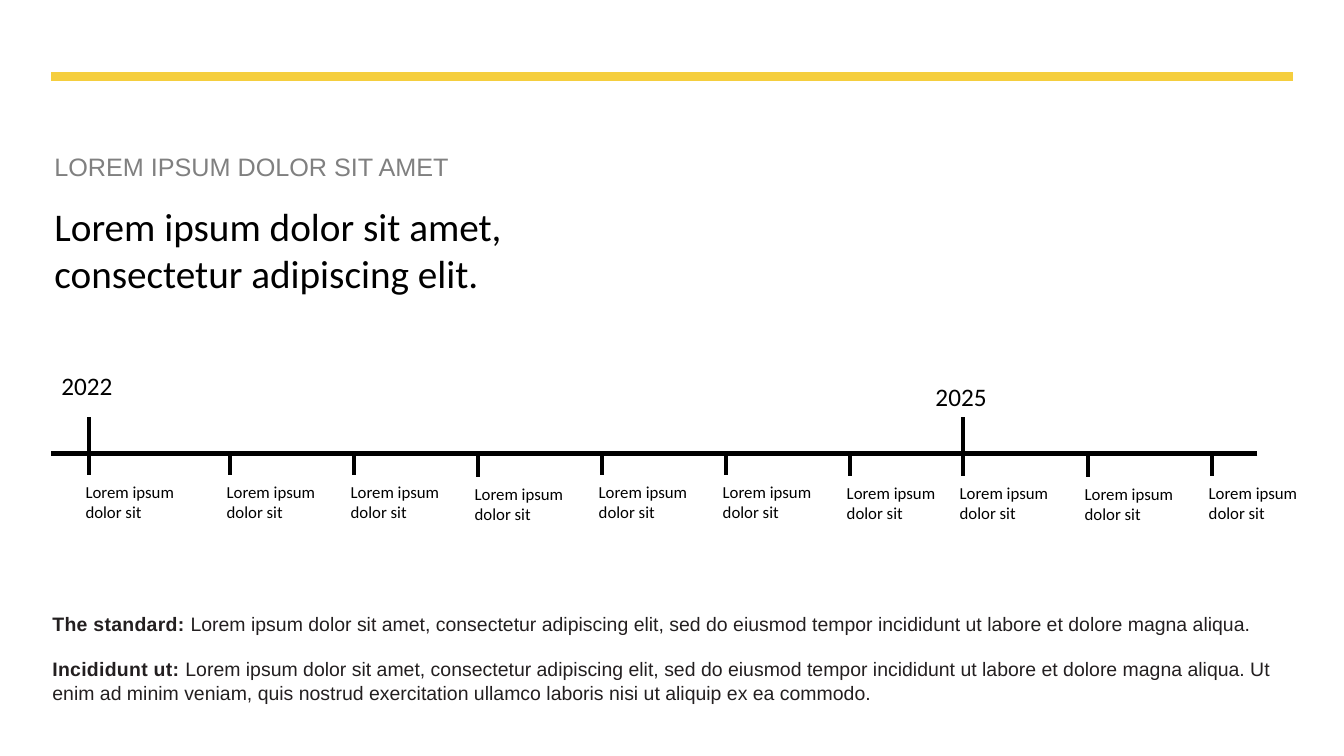
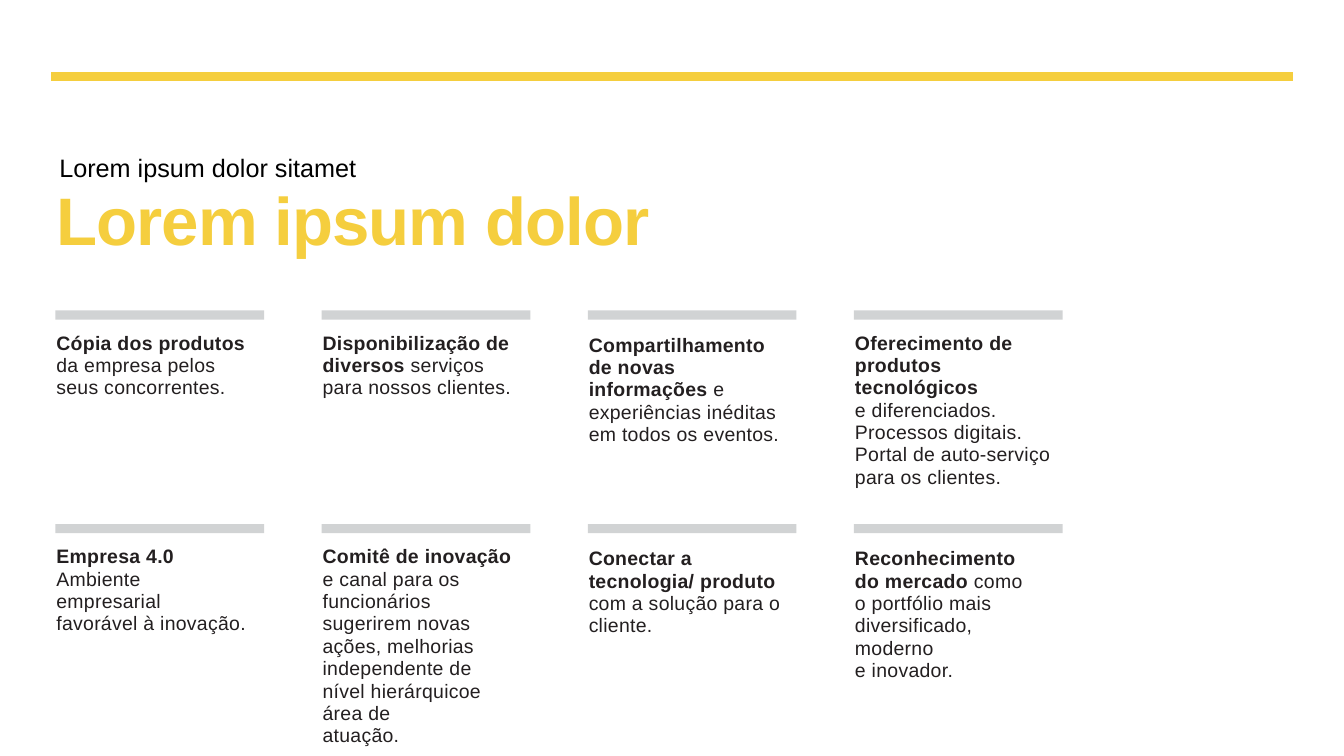
from dataclasses import dataclass, field

from lxml import etree
from pptx import Presentation
from pptx.dml.color import RGBColor
from pptx.enum.shapes import MSO_CONNECTOR, MSO_SHAPE
from pptx.enum.text import MSO_ANCHOR, MSO_AUTO_SIZE, PP_ALIGN
from pptx.oxml.ns import qn
from pptx.util import Inches, Pt

STRAIGHT = MSO_CONNECTOR.STRAIGHT
RECTANGLE = MSO_SHAPE.RECTANGLE
TOP, MIDDLE = MSO_ANCHOR.TOP, MSO_ANCHOR.MIDDLE
NO_FIT, GROW = MSO_AUTO_SIZE.NONE, MSO_AUTO_SIZE.SHAPE_TO_FIT_TEXT
LEFT = PP_ALIGN.LEFT

YELLOW, BLACK, INK = "F5CE3E", "000000", "231F20"
GREY, SILVER = "808080", "D1D3D4"
PADDED = (0.1, 0.05, 0.1, 0.05)


def font(name, size, color, bold=False, spacing=0):
    return {"font": {"name": name, "size": Pt(size), "bold": bold},
            "color": color, "spacing": spacing}


@dataclass(frozen=True)
class Theme:
    accent: str = YELLOW
    axis: str = BLACK
    bar: str = SILVER
    text: dict = field(default_factory=lambda: {
        "headline": font("Calibri", 28, BLACK),
        "big_title": font("Arial", 48, YELLOW, bold=True, spacing=-0.7),
        "grey_kicker": font("Arial", 18, GREY),
        "kicker": font("Arial", 18, BLACK),
        "year": font("Calibri", 18, BLACK),
        "label": font("Calibri", 12, BLACK),
        "note": font("Arial", 13.9, INK, spacing=0.2),
        "tight_note": font("Arial", 13.9, INK),
        "lead": font("Arial", 13.9, INK, bold=True, spacing=0.2),
    })


class Deck:
    """Holds the theme, the presentation and the slide being built."""

    def __init__(self, theme):
        self.theme = theme
        self.prs = Presentation()
        self.prs.slide_width, self.prs.slide_height = Inches(13.33), Inches(7.5)
        self.layout = self.prs.slide_layouts[5]
        self.slide = None

    def new_slide(self):
        self.slide = self.prs.slides.add_slide(self.layout)

    def add_band(self):
        """Place the yellow rule on the layout, so that every slide shows it."""
        band = self.line(12.82, 0.76, 0.51, 0.76, self.theme.accent, 6)
        self.layout.shapes.element.append(band.element)

    def line(self, x1, y1, x2, y2, color, width):
        sp = self.slide.shapes.add_connector(
            STRAIGHT, Inches(x1), Inches(y1), Inches(x2), Inches(y2))
        sp.line.color.rgb = RGBColor.from_string(color)
        sp.line.width = Pt(width)
        etree.SubElement(sp.element.spPr, qn("a:effectLst"))
        return sp

    def bar(self, x, y, w, h):
        sp = self.slide.shapes.add_shape(
            RECTANGLE, Inches(x), Inches(y), Inches(w), Inches(h))
        sp.shadow.inherit = False
        sp.fill.solid()
        sp.fill.fore_color.rgb = RGBColor.from_string(self.theme.bar)
        sp.line.fill.background()

    def run(self, p, text, style):
        look = self.theme.text[style]
        r = p.add_run()
        r.text = text
        for name, value in look["font"].items():
            setattr(r.font, name, value)
        r.font.color.rgb = RGBColor.from_string(look["color"])
        if look["spacing"]:
            r._r.get_or_add_rPr().set("spc", str(round(look["spacing"] * 100)))

    def frame(self, tf, insets, anchor, fit):
        sides = ("margin_left", "margin_top", "margin_right", "margin_bottom")
        values = dict(zip(sides, map(Inches, insets)),
                      word_wrap=True, vertical_anchor=anchor, auto_size=fit)
        for name, value in values.items():
            setattr(tf, name, value)

    def title(self, text, style, box, insets=PADDED, anchor=TOP):
        sp = self.slide.shapes.title
        sp.left, sp.top, sp.width, sp.height = map(Inches, box)
        self.frame(sp.text_frame, insets, anchor, NO_FIT)
        p = sp.text_frame.paragraphs[0]
        p.alignment = LEFT
        self.run(p, text, style)

    def text(self, paragraphs, box, style, insets=PADDED, **spacing):
        """Each paragraph is a pair: a bold lead and the text after it."""
        sp = self.slide.shapes.add_textbox(*map(Inches, box))
        tf = sp.text_frame
        self.frame(tf, insets, TOP, GROW)
        for i, parts in enumerate(paragraphs):
            p = tf.add_paragraph() if i else tf.paragraphs[0]
            for name, value in spacing.items():
                if i or name != "space_before":
                    setattr(p, name, value)
            for part, part_style in zip(parts, ("lead", style)):
                if part:
                    self.run(p, part, part_style)

    def label(self, text, box, style):
        self.text([("", text)], box, style)


# Tick positions, and how far each tick and its label sit below the first
TICKS = [0.88] + [2.28 + 1.23 * i for i in range(6)] + [9.55, 10.79, 12.02]
DROPS = [0, 0, 0, 0.02, 0, 0, 0.01, 0.01, 0.02, 0.01]
YEARS = {0: ("2022", 0.51, 3.62), 7: ("2025", 9.18, 3.73)}

NOTES = [
    ("The standard: ",
     "Lorem ipsum dolor sit amet, consectetur adipiscing elit, sed do eiusmod "
     "tempor incididunt ut labore et dolore magna aliqua."),
    ("Incididunt ut: ",
     "Lorem ipsum dolor sit amet, consectetur adipiscing elit, sed do eiusmod "
     "tempor incididunt ut labore et dolore magna aliqua. Ut enim ad minim "
     "veniam, quis nostrud exercitation ullamco laboris nisi ut aliquip ex ea "
     "commodo."),
]

# Each card: width, height, top inset, right inset, paragraphs
CARDS = [
    [
        (1.94, 0.7, 0.03, 0, [
            ("Cópia dos produtos", ""),
            ("", "da empresa pelos seus concorrentes.")]),
        (1.97, 0.7, 0.03, 0, [
            ("Disponibilização de", ""),
            ("diversos ", "serviços para nossos clientes.")]),
        (1.99, 0.92, 0.05, 0, [
            ("Compartilhamento de novas informações ",
             "e experiências inéditas em todos os eventos.")]),
        (2.03, 1.37, 0.03, 0, [
            ("Oferecimento de", ""),
            ("produtos tecnológicos", ""),
            ("", "e diferenciados."),
            ("", "Processos digitais."),
            ("", "Portal de auto-serviço para os clientes.")]),
    ],
    [
        (1.94, 0.7, 0.03, 0.03, [
            ("Empresa 4.0", ""),
            ("", "Ambiente empresarial favorável à inovação.")]),
        (2.04, 1.59, 0.03, 0.1, [
            ("Comitê de inovação", ""),
            ("", "e canal para os"),
            ("", "funcionários sugerirem novas ações, melhorias independente "
                 "de nível hierárquicoe área de"),
            ("", "atuação.")]),
        (2.07, 0.7, 0.05, 0, [
            ("Conectar a tecnologia/ produto ",
             "com a solução para o cliente.")]),
        (2.02, 1.13, 0.05, 0.2, [
            ("Reconhecimento do mercado ", "como o portfólio mais"),
            ("", "diversificado, moderno"),
            ("", "e inovador.")]),
    ],
]


def timeline_slide(deck):
    axis, axis_y = deck.theme.axis, 4.5
    deck.title("Lorem ipsum dolor sit amet, consectetur adipiscing elit.",
               "headline", (0.44, 1.96, 6.15, 1.04))
    deck.label("LOREM IPSUM DOLOR SIT AMET", (0.44, 1.45, 5.87, 0.4), "grey_kicker")
    deck.line(12.47, axis_y, 0.51, axis_y, axis, 3)
    for i, (x, drop) in enumerate(zip(TICKS, DROPS)):
        top = 4.14 if i in YEARS else axis_y + drop
        deck.line(x, top, x, axis_y + 0.21 + drop, axis, 3)
        deck.label("Lorem ipsum dolor sit",
                   (x - 0.13, axis_y + 0.23 + drop, 1.23, 0.5), "label")
    for year, x, y in YEARS.values():
        deck.label(year, (x, y, 0.75, 0.4), "year")
    deck.text(NOTES, (0.51, 6.06, 12.31, 0.95), "tight_note",
              (0.01, 0.01, 0, 0), space_before=Pt(16))


def cards_slide(deck):
    deck.title("Lorem ipsum dolor", "big_title", (0.55, 1.75, 6.11, 0.82),
               (0.01, 0.01, 0, 0), MIDDLE)
    deck.label("Lorem ipsum dolor sitamet", (0.49, 1.46, 3.64, 0.4), "kicker")
    for row, cards in enumerate(CARDS):
        y = 3.08 + 2.12 * row
        for col, (w, h, top, right, paragraphs) in enumerate(cards):
            x = 0.55 + 2.64 * col
            deck.bar(x, y, 2.07, 0.09)
            deck.text(paragraphs, (x, y + 0.18, w, h), "note",
                      (0.01, top, right, 0), line_spacing=Pt(16))


def main():
    deck = Deck(Theme())
    deck.new_slide()
    deck.add_band()
    timeline_slide(deck)
    deck.new_slide()
    cards_slide(deck)
    deck.prs.save("out.pptx")


if __name__ == "__main__":
    main()
